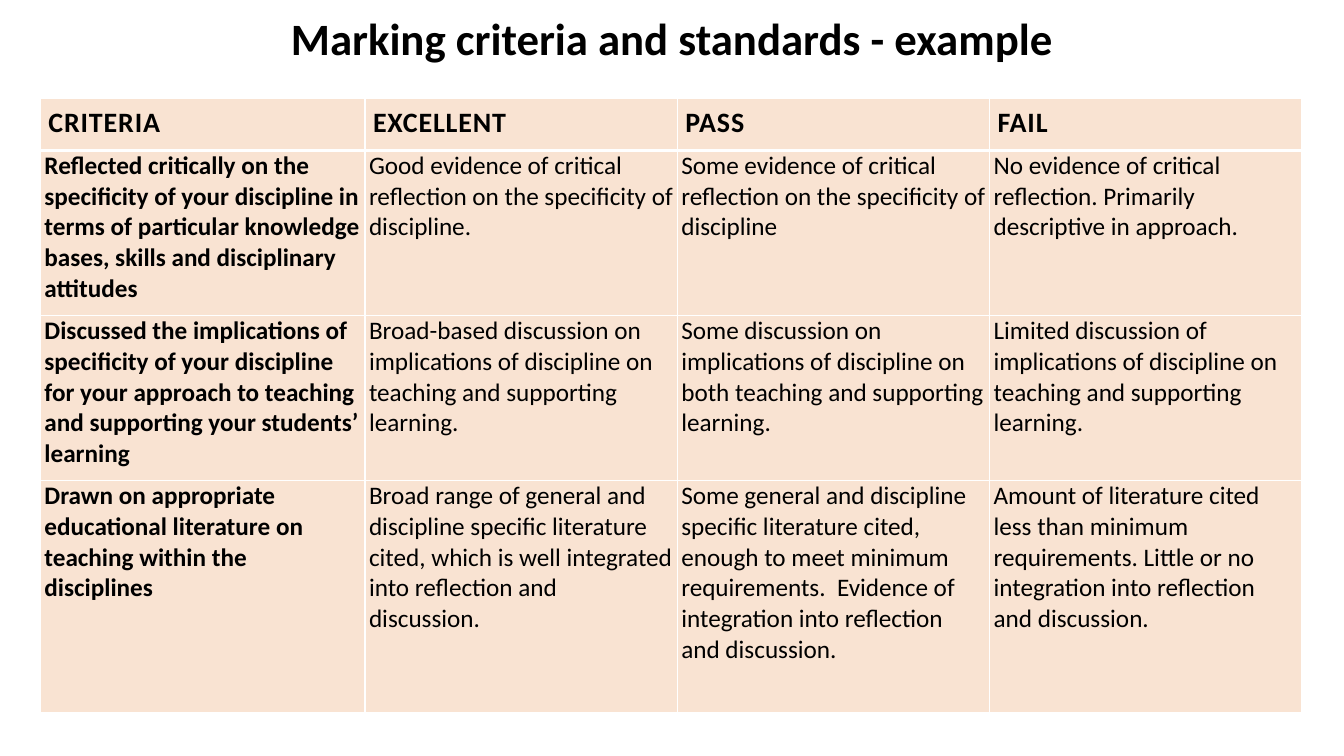
from lxml import etree
from pptx import Presentation
from pptx.dml.color import RGBColor
from pptx.enum.text import MSO_ANCHOR, PP_ALIGN
from pptx.oxml.ns import qn
from pptx.util import Cm, Pt

CENTER = PP_ALIGN.CENTER
BOTTOM = MSO_ANCHOR.BOTTOM
FONT = "Calibri"
COLORS = {"text": "000000", "cell": "F9E3D2", "border": "FFFFFF"}
COLUMN_WIDTHS = [8.18, 7.87, 7.87, 7.87]
ROW_HEIGHTS = [1.32, 4.16, 4.16, 5.85]
HEADER_MARGINS = [0.2, 0.2, 0.2, 0.2]
BODY_MARGINS = [0.1, 0, 0.1, 0.13]
CRITERIA = [
    ["CRITERIA", "EXCELLENT", "PASS", "FAIL"],
    [
        "Reflected critically on the specificity of your discipline in terms of "
        "particular knowledge bases, skills and disciplinary attitudes",
        "Good evidence of critical reflection on the specificity of discipline.",
        "Some evidence of critical reflection on the specificity of discipline",
        "No evidence of critical reflection. Primarily descriptive in approach.",
    ],
    [
        "Discussed the implications of specificity of your discipline for your "
        "approach to teaching and supporting your students’ learning",
        "Broad-based discussion on implications of discipline on teaching and "
        "supporting learning.",
        "Some discussion on implications of discipline on both teaching and "
        "supporting learning.",
        "Limited discussion of implications of discipline on teaching and "
        "supporting learning.",
    ],
    [
        "Drawn on appropriate educational literature on teaching within the disciplines",
        "Broad range of general and discipline specific literature cited, which is "
        "well integrated into reflection and discussion.",
        "Some general and discipline specific literature cited, enough to meet "
        "minimum requirements.  Evidence of integration into reflection and discussion.",
        "Amount of literature cited less than minimum requirements. Little or no "
        "integration into reflection and discussion.",
    ],
]


def set_text(paragraph, text, size, bold):
    """Write one run and set the font of its paragraph."""
    paragraph.add_run().text = text
    font = paragraph.font
    font.name, font.size, font.bold = FONT, Pt(size), bold
    font.color.rgb = RGBColor.from_string(COLORS["text"])


def set_margins(frame, margins):
    """Set left, top, right and bottom margins given in centimetres."""
    (frame.margin_left, frame.margin_top,
     frame.margin_right, frame.margin_bottom) = map(Cm, margins)


def set_borders(cell, top, bottom):
    """Draw the four cell borders, with top and bottom widths in points."""
    properties = cell._tc.get_or_add_tcPr()
    widths = {"a:lnL": 1, "a:lnR": 1, "a:lnT": top, "a:lnB": bottom}
    for index, (tag, width) in enumerate(widths.items()):
        line = etree.Element(qn(tag), w=str(Pt(width)))
        fill = etree.SubElement(line, qn("a:solidFill"))
        etree.SubElement(fill, qn("a:srgbClr"), val=COLORS["border"])
        properties.insert(index, line)


def add_title(slide, text):
    """Add the centred slide title."""
    box = slide.shapes.add_textbox(Cm(1.7), Cm(0.28), Cm(30.48), Cm(1.5))
    frame = box.text_frame
    frame.word_wrap = True
    frame.vertical_anchor = BOTTOM
    paragraph = frame.paragraphs[0]
    paragraph.alignment = CENTER
    paragraph.line_spacing = 0.9
    set_text(paragraph, text, 32, True)


def fill_cell(cell, text, row, column):
    """Write and style one cell by its place in the table."""
    header = row == 0
    cell.fill.solid()
    cell.fill.fore_color.rgb = RGBColor.from_string(COLORS["cell"])
    set_margins(cell, HEADER_MARGINS if header else BODY_MARGINS)
    set_borders(cell, top=3 if row == 1 else 1, bottom=3 if header else 1)
    paragraph = cell.text_frame.paragraphs[0]
    set_text(paragraph, text, 20 if header else 18, header or column == 0)
    if header:
        paragraph.runs[0]._r.get_or_add_rPr().set("spc", "60")


def add_criteria_table(slide):
    """Add the table of criteria and standards."""
    frame = slide.shapes.add_table(
        len(ROW_HEIGHTS), len(COLUMN_WIDTHS), Cm(1.02), Cm(2.47),
        Cm(sum(COLUMN_WIDTHS)), Cm(sum(ROW_HEIGHTS)))
    table = frame.table
    table.first_row = table.horz_banding = False
    for column, width in zip(table.columns, COLUMN_WIDTHS):
        column.width = Cm(width)
    for row, height in zip(table.rows, ROW_HEIGHTS):
        row.height = Cm(height)
    for row, texts in enumerate(CRITERIA):
        for column, text in enumerate(texts):
            fill_cell(table.cell(row, column), text, row, column)


def main():
    """Build and save the slide."""
    presentation = Presentation()
    presentation.slide_width, presentation.slide_height = Cm(33.87), Cm(19.05)
    slide = presentation.slides.add_slide(presentation.slide_layouts[6])
    add_title(slide, "Marking criteria and standards - example")
    add_criteria_table(slide)
    presentation.save("out.pptx")


if __name__ == "__main__":
    main()
